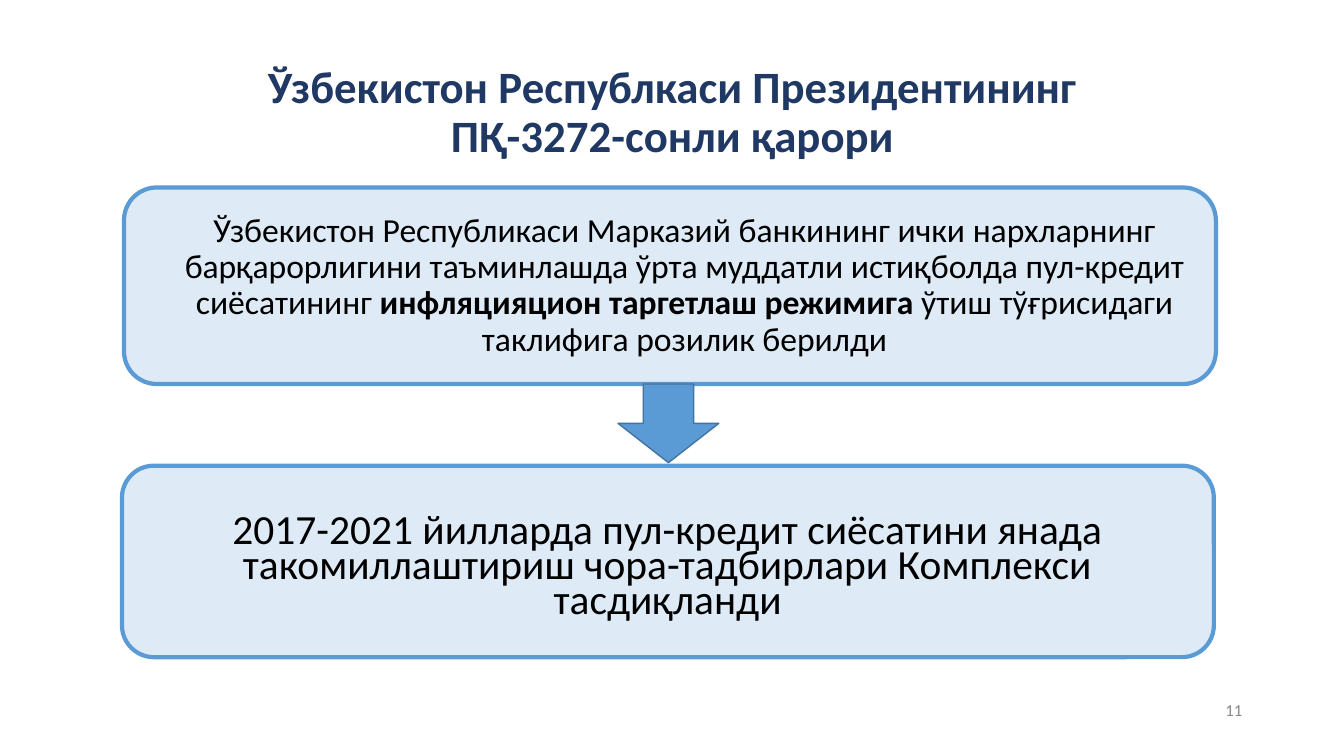
import pptx
import pptx.dml.color
import pptx.enum.shapes
import pptx.enum.text
import pptx.oxml
import pptx.oxml.ns
import pptx.util

WIDTH, HEIGHT = 13.33, 7.5
TITLE = "Ўзбекистон Республкаси Президентининг\vПҚ-3272-сонли қарори"
DECISION = [
    ("Ўзбекистон Республикаси Марказий банкининг ички нархларнинг барқарорлигини "
     "таъминлашда ўрта муддатли истиқболда пул-кредит сиёсатининг ", False),
    ("инфляцияцион таргетлаш режимига ", True),
    ("ўтиш тўғрисидаги таклифига розилик берилди", False),
]
MEASURES = [("2017-2021 йилларда пул-кредит сиёсатини янада такомиллаштириш "
             "чора-тадбирлари Комплекси тасдиқланди", False)]
PAGE_NUMBER = "11"

BOX_WIDTH = 10.83
DECISION_TOP, DECISION_HEIGHT = 1.86, 1.95
MEASURES_TOP, MEASURES_HEIGHT = 4.62, 1.9
ARROW_WIDTH, ARROW_HEIGHT = 1, 0.78
CENTER = pptx.enum.text.PP_ALIGN.CENTER
RIGHT = pptx.enum.text.PP_ALIGN.RIGHT
SHAPES = pptx.enum.shapes.MSO_SHAPE


def color(value):
    return pptx.dml.color.RGBColor.from_string(value)


def place(shape, *box):
    shape.left, shape.top, shape.width, shape.height = map(pptx.util.Inches, box)


def paint(shape, fill, line, weight):
    shape.fill.solid()
    shape.fill.fore_color.rgb = color(fill)
    shape.line.color.rgb = color(line)
    shape.line.width = pptx.util.Pt(weight)


def write(shape, pieces, size, ink, alignment=CENTER, spacing=1.0, before=0, after=0):
    frame = shape.text_frame
    frame.word_wrap = True
    frame.auto_size = pptx.enum.text.MSO_AUTO_SIZE.NONE
    frame.vertical_anchor = pptx.enum.text.MSO_ANCHOR.MIDDLE
    frame.text = pieces[0][0]
    paragraph = frame.paragraphs[0]
    for words, bold in pieces[1:]:
        paragraph.add_run().text = words
    paragraph.alignment = alignment
    paragraph.line_spacing = spacing
    paragraph.space_before = pptx.util.Pt(before)
    paragraph.space_after = pptx.util.Pt(after)
    bolds = [bold for words, bold in pieces]
    for index, run in enumerate(paragraph.runs):
        run.font.name = "Calibri"
        run.font.size = pptx.util.Pt(size)
        run.font.bold = bolds[min(index, len(bolds) - 1)]
        run.font.color.rgb = color(ink)
    return paragraph


def main():
    """Build the slide about the decree and save it."""
    presentation = pptx.Presentation()
    presentation.slide_width = pptx.util.Inches(WIDTH)
    presentation.slide_height = pptx.util.Inches(HEIGHT)
    slide = presentation.slides.add_slide(presentation.slide_layouts[1])

    title = slide.shapes.title
    place(title, 0.92, 0.4, 11.5, 1.45)
    write(title, [(TITLE, True)], 32, "203864", spacing=0.9)

    number = slide.shapes.add_textbox(0, 0, 0, 0)
    place(number, 9.42, 6.84, 3, 0.4)
    write(number, [(PAGE_NUMBER, False)], 12, "898989", RIGHT)

    decision = slide.placeholders[1]
    place(decision, 1.23, DECISION_TOP, BOX_WIDTH, DECISION_HEIGHT)
    decision.element.spPr.append(pptx.oxml.parse_xml(
        f'<a:prstGeom {pptx.oxml.ns.nsdecls("a")} prst="roundRect"><a:avLst/></a:prstGeom>'))
    paint(decision, "DEEBF7", "5B9BD5", 3)
    paragraph = write(decision, DECISION, 24, "000000", spacing=0.9, before=10)
    properties = paragraph._p.get_or_add_pPr()
    properties.set("marL", str(pptx.util.Inches(0.29)))
    properties.set("indent", "0")
    properties.append(pptx.oxml.parse_xml(f'<a:buNone {pptx.oxml.ns.nsdecls("a")}/>'))

    measures = slide.shapes.add_shape(SHAPES.ROUNDED_RECTANGLE, 0, 0, 0, 0)
    place(measures, 1.21, MEASURES_TOP, BOX_WIDTH, MEASURES_HEIGHT)
    paint(measures, "DEEBF7", "5B9BD5", 3)
    write(measures, MEASURES, 29.6, "000000", spacing=0.7, before=12, after=2)
    frame = measures.text_frame
    frame.margin_left = frame.margin_right = frame.margin_bottom = pptx.util.Inches(0.05)
    frame.margin_top = pptx.util.Inches(0.2)

    arrow = slide.shapes.add_shape(SHAPES.DOWN_ARROW, 0, 0, 0, 0)
    place(arrow, 6.13, DECISION_TOP + DECISION_HEIGHT, ARROW_WIDTH, ARROW_HEIGHT)
    paint(arrow, "5B9BD5", "43739E", 1)
    for shape in (measures, arrow):
        shape.shadow.inherit = False

    presentation.save("out.pptx")


if __name__ == "__main__":
    main()
